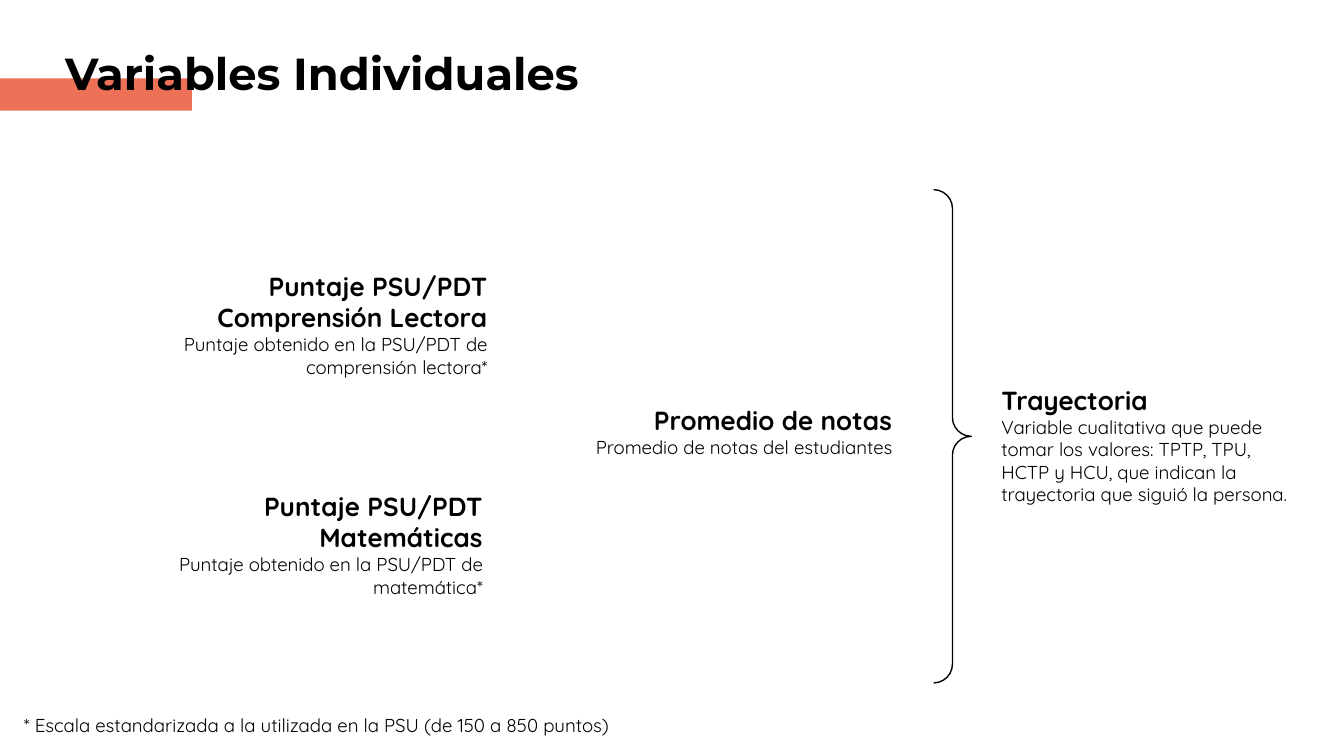
import pptx
import pptx.util
import pptx.dml.color
import pptx.enum.shapes
import pptx.enum.text

COLORS = {"accent": "EC7157", "ink": "000000", "paper": "FFFFFF"}
COLUMNS, ROWS = 100, 56.25
SHAPES = pptx.enum.shapes.MSO_SHAPE
ALIGN = pptx.enum.text.PP_ALIGN
ANCHOR = pptx.enum.text.MSO_ANCHOR


class SlideBuilder:
    heading_font = "Montserrat"
    body_font = "Quicksand"
    title_size, label_size, detail_size = 24, 14, 10

    def __init__(self, deck):
        self.deck = deck
        self.page = deck.slides.add_slide(deck.slide_layouts[6])
        background = self.page.background.fill
        background.solid()
        background.fore_color.rgb = self.color("paper")

    def color(self, name):
        return pptx.dml.color.RGBColor.from_string(COLORS[name])

    def place(self, left, top, width, height):
        column = self.deck.slide_width / COLUMNS
        row = self.deck.slide_height / ROWS
        return [round(length) for length in
                (left * column, top * row, width * column, height * row)]

    def bar(self, area):
        shape = self.page.shapes.add_shape(SHAPES.RECTANGLE, *self.place(*area))
        shape.shadow.inherit = False
        shape.fill.solid()
        shape.fill.fore_color.rgb = self.color("accent")
        shape.line.fill.background()

    def brace(self, area):
        shape = self.page.shapes.add_shape(SHAPES.RIGHT_BRACE, *self.place(*area))
        shape.shadow.inherit = False
        shape.adjustments[0] = 0.5
        shape.adjustments[1] = 0.5
        shape.fill.background()
        shape.line.color.rgb = self.color("ink")
        shape.line.width = pptx.util.Pt(0.75)

    def text(self, area, lines, font=body_font, align=ALIGN.LEFT, anchor=ANCHOR.TOP):
        box = self.page.shapes.add_textbox(*self.place(*area))
        frame = box.text_frame
        frame.word_wrap = True
        frame.vertical_anchor = anchor
        frame.margin_left = frame.margin_right = pptx.util.Inches(0.1)
        frame.margin_top = frame.margin_bottom = pptx.util.Inches(0.1)
        for index, (words, size, bold) in enumerate(lines):
            para = frame.add_paragraph() if index else frame.paragraphs[0]
            para.text = words
            para.alignment = align
            para.font.name = font
            para.font.size = pptx.util.Pt(size)
            para.font.bold = bold
            para.font.color.rgb = self.color("ink")

    def title(self, area, words):
        self.text(area, [(words, self.title_size, True)], font=self.heading_font)

    def variable(self, area, name, detail, align=ALIGN.RIGHT):
        lines = [(name, self.label_size, True), (detail, self.detail_size, False)]
        self.text(area, lines, align=align)

    def footnote(self, area, words):
        self.text(area, [(words, self.detail_size, False)], anchor=ANCHOR.BOTTOM)


def main():
    deck = pptx.Presentation()
    deck.slide_width = pptx.util.Inches(10)
    deck.slide_height = deck.slide_width * 9 // 16
    slide = SlideBuilder(deck)

    slide.bar((0, 5.83, 14.27, 2.4))
    slide.title((3.87, 2.4, 56.6, 7), "Variables Individuales")
    slide.brace((69.47, 14.12, 2.8, 36.7))
    slide.variable((38.97, 29.1, 28.4, 7.6), "Promedio de notas",
                   "Promedio de notas del estudiantes")
    slide.variable((8.15, 19.12, 29.1, 7.6), "Puntaje PSU/PDT Comprensión Lectora",
                   "Puntaje obtenido en la PSU/PDT de comprensión lectora*")
    slide.variable((8.5, 35.48, 28.4, 7.6), "Puntaje PSU/PDT Matemáticas",
                   "Puntaje obtenido en la PSU/PDT de matemática*")
    slide.variable((73.53, 27.6, 23.3, 11.7), "Trayectoria",
                   "Variable cualitativa que puede tomar los valores: TPTP, TPU, "
                   "HCTP y HCU, que indican la trayectoria que siguió la persona.",
                   align=ALIGN.LEFT)
    slide.footnote((0.8, 48.05, 45.9, 7.55),
                   "* Escala estandarizada a la utilizada en la PSU (de 150 a 850 puntos)")

    deck.save("out.pptx")


if __name__ == "__main__":
    main()
